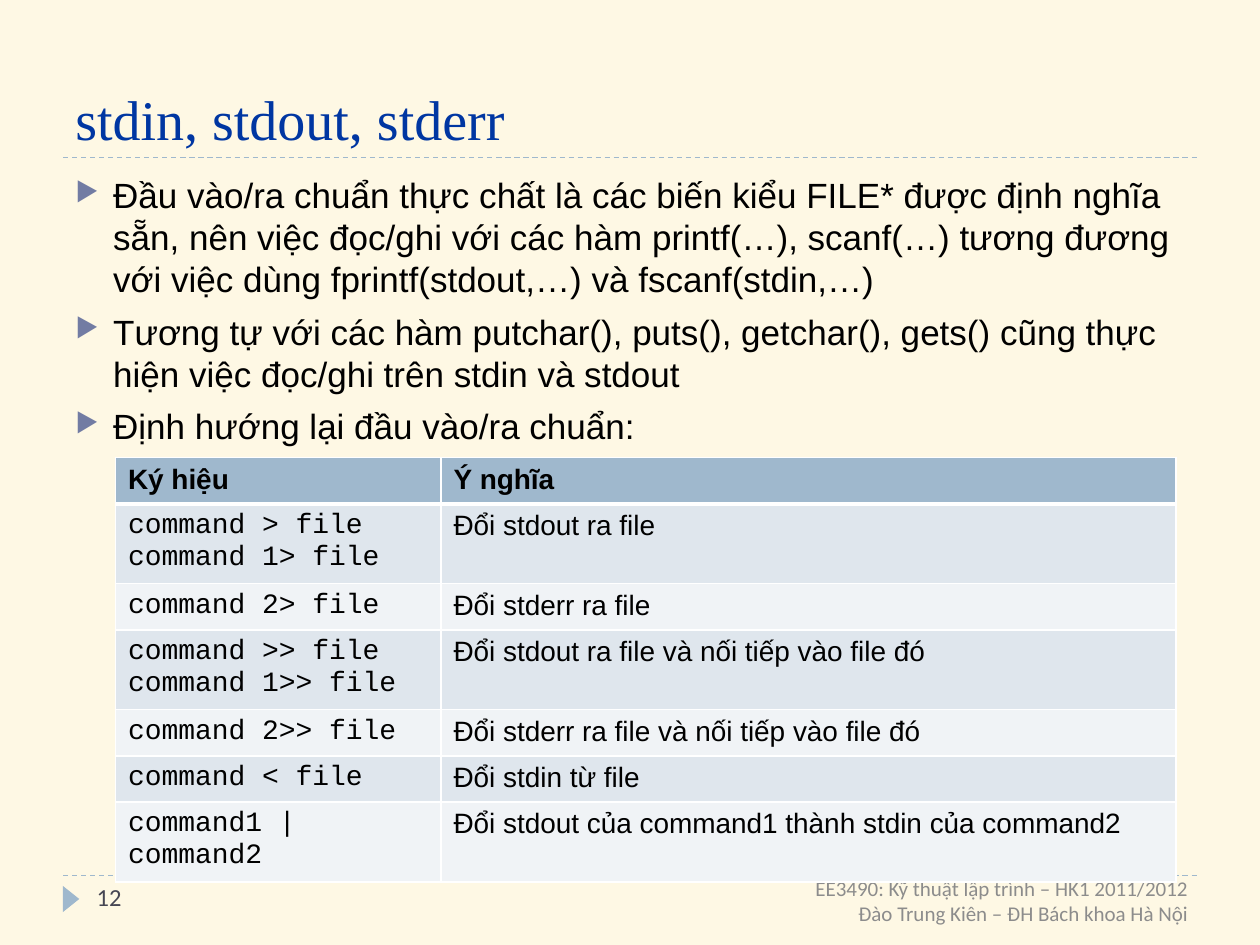
"""Build the slide on stdin, stdout and stderr with its redirection table."""
import dataclasses

import lxml.etree
import pptx
import pptx.dml.color
import pptx.enum.dml
import pptx.enum.shapes
import pptx.enum.text
import pptx.oxml.ns
import pptx.util

Pt = pptx.util.Pt
RGB = pptx.dml.color.RGBColor.from_string
qn = pptx.oxml.ns.qn
ANCHOR = pptx.enum.text.MSO_ANCHOR
ALIGN = pptx.enum.text.PP_ALIGN


@dataclasses.dataclass(frozen=True)
class Theme:
    background: str = "FEF8E4"
    accent: str = "9FB8CD"
    bullet: str = "727CA3"
    title: str = "0036A2"
    text: str = "000000"
    number: str = "464653"
    footer: str = "8C8C8C"
    border: str = "FFFFFF"
    bands: tuple = ("DFE6ED", "F0F3F6")
    title_size: int = 32
    body_size: int = 20
    table_size: int = 16
    number_size: int = 14
    footer_size: int = 12


theme = Theme()


def add_text_box(left, top, width, height, anchor=ANCHOR.TOP):
    text_frame = slide.shapes.add_textbox(Pt(left), Pt(top), Pt(width), Pt(height)).text_frame
    text_frame.word_wrap = True
    text_frame.vertical_anchor = anchor
    return text_frame


def write_lines(text_frame, lines, font_name, size, color, bold=False, align=ALIGN.LEFT):
    for index, line in enumerate(lines):
        paragraph = text_frame.add_paragraph() if index else text_frame.paragraphs[0]
        paragraph.alignment = align
        run = paragraph.add_run()
        run.text = line
        run.font.name = font_name
        run.font.size = Pt(size)
        run.font.bold = bold
        run.font.color.rgb = RGB(color)


presentation = pptx.Presentation()
presentation.slide_width, presentation.slide_height = Pt(720), Pt(540)
slide = presentation.slides.add_slide(presentation.slide_layouts[6])
slide.background.fill.solid()
slide.background.fill.fore_color.rgb = RGB(theme.background)

for rule_top in (90, 500.4):
    rule = slide.shapes.add_connector(
        pptx.enum.shapes.MSO_CONNECTOR.STRAIGHT, Pt(36), Pt(rule_top), Pt(684), Pt(rule_top))
    rule.line.color.rgb = RGB(theme.accent)
    rule.line.width = Pt(0.75)
    rule.line.dash_style = pptx.enum.dml.MSO_LINE.DASH
    lxml.etree.SubElement(rule._element.spPr, qn("a:effectLst"))

marker = slide.shapes.add_shape(
    pptx.enum.shapes.MSO_SHAPE.ISOSCELES_TRIANGLE, Pt(33.1), Pt(509), Pt(15), Pt(9.4))
marker.rotation = 90
marker.shadow.inherit = False
marker.fill.solid()
marker.fill.fore_color.rgb = RGB(theme.accent)
marker.line.fill.background()

title = add_text_box(36, 12.2, 648, 77.8, ANCHOR.BOTTOM)
write_lines(title, ["stdin, stdout, stderr"], "Times New Roman", theme.title_size, theme.title)

points = [
    "Đầu vào/ra chuẩn thực chất là các biến kiểu FILE* được định nghĩa sẵn, nên việc đọc/ghi "
    "với các hàm printf(…), scanf(…) tương đương với việc dùng fprintf(stdout,…) và fscanf(stdin,…)",
    "Tương tự với các hàm putchar(), puts(), getchar(), gets() cũng thực hiện việc đọc/ghi "
    "trên stdin và stdout",
    "Định hướng lại đầu vào/ra chuẩn:",
]
body = add_text_box(36, 95.8, 648, 388.8)
write_lines(body, points, "Arial", theme.body_size, theme.text)
for index, paragraph in enumerate(body.paragraphs):
    paragraph.space_before = Pt(6 if index else 0)
    properties = paragraph._p.get_or_add_pPr()
    properties.set("marL", str(Pt(21.6)))
    properties.set("indent", str(Pt(-21.6)))
    bullet_color = lxml.etree.SubElement(properties, qn("a:buClr"))
    lxml.etree.SubElement(bullet_color, qn("a:srgbClr"), val=theme.bullet)
    lxml.etree.SubElement(properties, qn("a:buSzPct"), val="76000")
    lxml.etree.SubElement(properties, qn("a:buChar"), char="▶")

slide_number = add_text_box(48.2, 500.4, 156.2, 28.8)
write_lines(slide_number, ["12"], "Calibri", theme.number_size, theme.number)
footer = add_text_box(246.2, 500.4, 439.9, 28.8, ANCHOR.MIDDLE)
write_lines(footer, ["EE3490: Kỹ thuật lập trình – HK1 2011/2012", "Đào Trung Kiên – ĐH Bách khoa Hà Nội"],
            "Calibri", theme.footer_size, theme.footer, align=ALIGN.RIGHT)

redirections = [
    (["Ký hiệu"], "Ý nghĩa"),
    (["command > file", "command 1> file"], "Đổi stdout ra file"),
    (["command 2> file"], "Đổi stderr ra file"),
    (["command >> file", "command 1>> file"], "Đổi stdout ra file và nối tiếp vào file đó"),
    (["command 2>> file"], "Đổi stderr ra file và nối tiếp vào file đó"),
    (["command < file"], "Đổi stdin từ file"),
    (["command1 | command2"], "Đổi stdout của command1 thành stdin của command2"),
]
table = slide.shapes.add_table(len(redirections), 2, Pt(66), Pt(261.5), Pt(606), Pt(223.2)).table
for column, width in zip(table.columns, (186, 420)):
    column.width = Pt(width)
for row_index, (symbols, meaning) in enumerate(redirections):
    is_header = row_index == 0
    table.rows[row_index].height = Pt(34.6 if len(symbols) > 1 else 20.2)
    for column_index, lines in enumerate((symbols, [meaning])):
        cell = table.cell(row_index, column_index)
        cell_properties = cell._tc.get_or_add_tcPr()
        widths = {"L": 1, "R": 1, "T": 3 if row_index == 1 else 1, "B": 3 if is_header else 1}
        for side, width in widths.items():
            border = lxml.etree.SubElement(cell_properties, qn(f"a:ln{side}"), w=str(Pt(width)))
            border_fill = lxml.etree.SubElement(border, qn("a:solidFill"))
            lxml.etree.SubElement(border_fill, qn("a:srgbClr"), val=theme.border)
        cell.fill.solid()
        cell.fill.fore_color.rgb = RGB(theme.accent if is_header else theme.bands[(row_index - 1) % 2])
        font_name = "Arial" if is_header or column_index else "Courier New"
        write_lines(cell.text_frame, lines, font_name, theme.table_size, theme.text, bold=is_header)

presentation.save("out.pptx")
